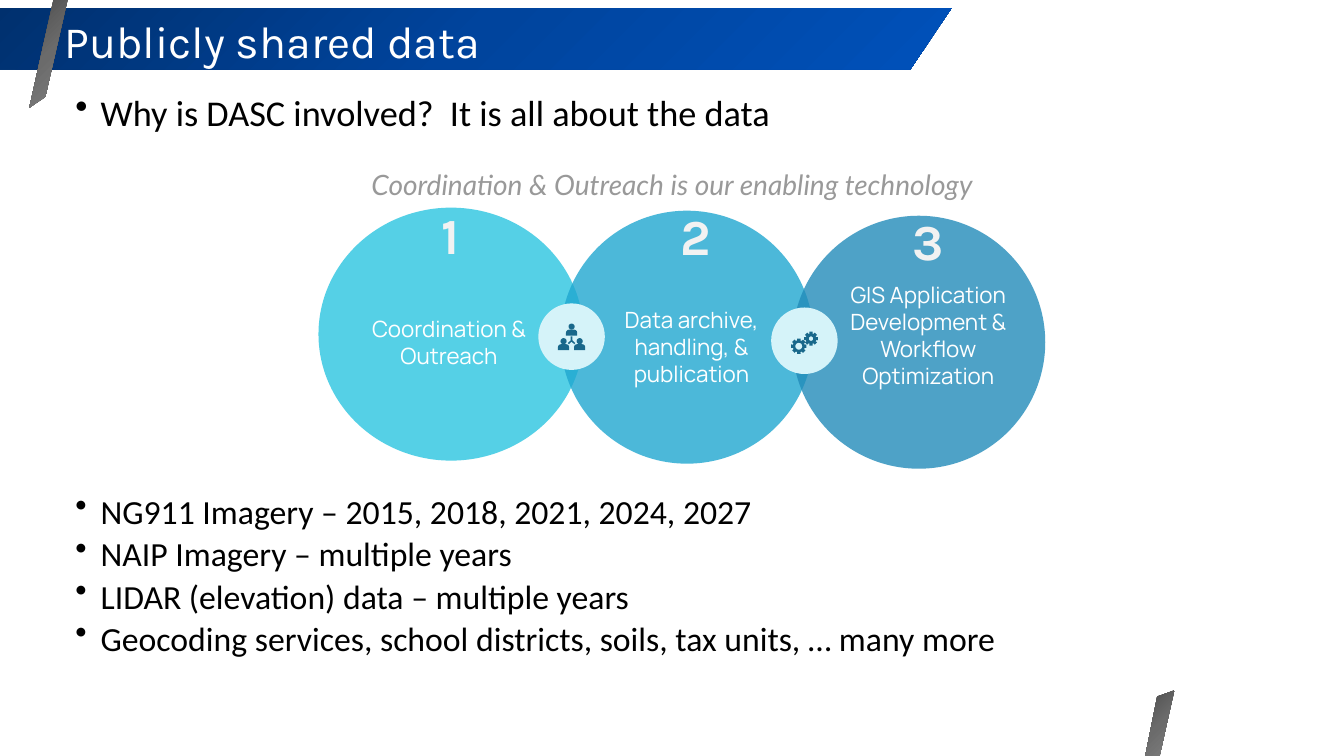
import copy
import math
from dataclasses import dataclass
from typing import Any

import pptx
import pptx.dml.color
import pptx.enum.shapes
import pptx.enum.text
import pptx.oxml
import pptx.oxml.ns
import pptx.util

Pt = pptx.util.Pt
RGB = pptx.dml.color.RGBColor
Kind = pptx.enum.shapes.MSO_SHAPE
Align = pptx.enum.text.PP_ALIGN
Anchor = pptx.enum.text.MSO_ANCHOR
Fit = pptx.enum.text.MSO_AUTO_SIZE
qn = pptx.oxml.ns.qn

WHITE = RGB(0xFF, 0xFF, 0xFF)
BLACK = RGB(0x00, 0x00, 0x00)
GREY = RGB(0x99, 0x99, 0x99)
PALE = RGB(0xF2, 0xF2, 0xF2)
ICE = RGB(0xD5, 0xF3, 0xF9)
TEAL = RGB(0x19, 0x68, 0x8B)
AQUA = RGB(0x2B, 0xC5, 0xE0)
SKY = RGB(0x20, 0xA7, 0xD0)
STEEL = RGB(0x22, 0x8B, 0xB9)
BLUES = (RGB(0x00, 0x30, 0x6E), RGB(0x00, 0x44, 0x9D), RGB(0x00, 0x51, 0xBA))
GREYS = (RGB(0x4C, 0x4C, 0x4C), RGB(0x6B, 0x6B, 0x6B), RGB(0x80, 0x80, 0x80))

Point = tuple[float, float]
Box = tuple[float, float, float, float]


@dataclass(frozen=True)
class Stage:
    oval: Box
    fill: RGB
    digit: str
    digit_box: Box
    label: str
    label_box: Box


@dataclass(frozen=True)
class Band:
    points: list[Point]
    shades: tuple[RGB, RGB, RGB]


@dataclass(frozen=True)
class Gear:
    x: float
    y: float
    tip: float
    root: float
    hole: float


@dataclass(frozen=True)
class Line:
    text: str
    size: float
    before: float


BANDS = [
    Band([(-5.76, 5.76), (679.68, 5.76), (650.16, 49.68), (-5.76, 49.68)], BLUES),
    Band([(38.16, 0), (20.88, 77.04), (32.4, 69.12), (48.24, 0)], GREYS),
    Band([(828, 541.44), (838.8, 493.2), (826.56, 497.52), (817.92, 540.72)], GREYS),
]
STAGES = [
    Stage((227.5, 148.3, 189.4, 180.7), AQUA, "1", (308.2, 142.6, 28.1, 41),
          "Coordination & Outreach", (252.7, 221.8, 136.1, 43.2)),
    Stage((400.3, 150.5, 180.7, 180.7), SKY, "2", (478.8, 143.3, 28.8, 41),
          "Data archive, handling, & publication", (430.6, 215.3, 126.7, 61.9)),
    Stage((565.9, 154.1, 180.7, 180.7), STEEL, "3", (644.4, 146.9, 35.3, 41),
          "GIS Application Development & Workflow Optimization", (599, 197.3, 128.2, 104.4)),
]
LINES = [
    Line("Why is DASC involved?  It is all about the data", 25.9, 0),
    Line("NG911 Imagery – 2015, 2018, 2021, 2024, 2027", 24.1, 264),
    Line("NAIP Imagery – multiple years", 24.1, 10),
    Line("LIDAR (elevation) data – multiple years", 24.1, 10),
    Line("Geocoding services, school districts, soils, tax units, … many more", 24.1, 10),
]
DISC = 47.5
TEAM: Point = (408.3, 240.5)
COGS: Point = (574.6, 243.4)
HEADS: list[Point] = [(0, -7.2), (-5.76, 3.2), (5.76, 3.2)]
LINK: list[Point] = [(0.6, -0.2), (0.6, 2.6), (2.6, 4.5), (2, 5.4), (0, 3.6)]
GEARS = [Gear(570.6, 247.3, 5.6, 4.3, 2.5), Gear(579.3, 241.9, 5.1, 3.8, 1.6)]


def paint(shape: Any, fill: RGB, alpha: int = 100) -> None:
    shape.shadow.inherit = False
    shape.line.fill.background()
    shape.fill.solid()
    shape.fill.fore_color.rgb = fill
    if alpha < 100:
        tint = shape.fill._xPr.find(".//" + qn("a:srgbClr"))
        tint.append(pptx.oxml.parse_xml(
            '<a:alpha xmlns:a="http://schemas.openxmlformats.org/drawingml/2006/main" '
            f'val="{alpha * 1000}"/>'))


def blend(shape: Any, shades: tuple[RGB, RGB, RGB]) -> None:
    """Fill with three evenly spaced colours running down to the right."""
    shape.fill.gradient()
    shape.fill.gradient_angle = 315
    first = shape.fill._xPr.find(".//" + qn("a:gs"))
    first.addnext(copy.deepcopy(first))
    for rank, (stop, shade) in enumerate(zip(shape.fill.gradient_stops, shades)):
        stop.position = rank / 2
        stop.color.rgb = shade


def preset(slide: Any, kind: Any, box: Box, fill: RGB, alpha: int = 100) -> Any:
    shape = slide.shapes.add_shape(kind, *map(Pt, box))
    paint(shape, fill, alpha)
    return shape


def outline(slide: Any, rings: list[list[Point]], fill: RGB) -> Any:
    """Draw closed rings as one shape; an inner ring cuts a hole."""
    rings = [[(Pt(x), Pt(y)) for x, y in ring] for ring in rings]
    pen = slide.shapes.build_freeform(*rings[0][0], scale=1.0)
    pen.add_line_segments(rings[0][1:], close=True)
    for ring in rings[1:]:
        pen.move_to(*ring[0])
        pen.add_line_segments(ring[1:], close=True)
    shape = pen.convert_to_shape()
    paint(shape, fill)
    return shape


def style(para: Any, text: str, *, size: float, face: str, fill: RGB, bold: bool = False,
          slant: bool = False, align: Any = Align.LEFT) -> None:
    para.text = text
    para.alignment = align
    font = para.font
    font.size, font.name, font.bold, font.italic = Pt(size), face, bold, slant
    font.color.rgb = fill


def frame(slide: Any, box: Box, grow: bool = True) -> Any:
    body = slide.shapes.add_textbox(*map(Pt, box)).text_frame
    body.word_wrap = True
    body.auto_size = Fit.SHAPE_TO_FIT_TEXT if grow else Fit.NONE
    return body


def write(slide: Any, box: Box, text: str, **look: Any) -> None:
    style(frame(slide, box).paragraphs[0], text, **look)


def polar(gear: Gear, size: float, turn: float) -> Point:
    angle = math.radians(turn)
    return gear.x + size * math.cos(angle), gear.y + size * math.sin(angle)


def cog(slide: Any, gear: Gear) -> None:
    edge = [polar(gear, size, turn + shift) for turn in range(0, 360, 45)
            for size, shift in ((gear.root, -16), (gear.tip, -13), (gear.tip, 13), (gear.root, 16))]
    hole = [polar(gear, gear.hole, turn) for turn in range(0, 360, 15)]
    outline(slide, [edge, hole], TEAL)


def person(slide: Any, x: float, y: float) -> None:
    preset(slide, Kind.OVAL, (x - 2.2, y - 2.2, 4.4, 4.4), TEAL)
    torso = preset(slide, Kind.ROUND_2_SAME_RECTANGLE, (x - 4, y + 2.2, 8, 4.2), TEAL)
    torso.adjustments[0] = 0.5


def disc(slide: Any, hub: Point) -> None:
    x, y = hub
    preset(slide, Kind.OVAL, (x - DISC / 2, y - DISC / 2, DISC, DISC), ICE)


def bullets(slide: Any, box: Box) -> None:
    body = frame(slide, box, grow=False)
    for rank, line in enumerate(LINES):
        para = body.add_paragraph() if rank else body.paragraphs[0]
        para.line_spacing = 0.7
        para.space_before = Pt(line.before)
        props = para._p.get_or_add_pPr()
        props.set("marL", str(Pt(18)))
        props.set("indent", str(Pt(-18)))
        props.append(pptx.oxml.parse_xml(
            '<a:buChar xmlns:a="http://schemas.openxmlformats.org/drawingml/2006/main" char="•"/>'))
        style(para, line.text, size=line.size, face="Calibri", fill=BLACK)


def main() -> None:
    deck = pptx.Presentation()
    deck.slide_width, deck.slide_height = Pt(960), Pt(540)
    slide = deck.slides.add_slide(deck.slide_layouts[6])
    for band in BANDS:
        blend(outline(slide, [band.points], band.shades[0]), band.shades)
    title = frame(slide, (38.9, 10.1, 611.3, 43.2), grow=False)
    title.vertical_anchor = Anchor.MIDDLE
    style(title.paragraphs[0], "Publicly shared data", size=32, face="Karla", fill=WHITE)
    title.paragraphs[0].line_spacing = 0.9
    bullets(slide, (46.8, 69.1, 802.1, 443.5))
    write(slide, (211.7, 115.9, 537.1, 22.3), "Coordination & Outreach is our enabling technology",
          size=20, face="Lato", fill=GREY, slant=True, align=Align.CENTER)
    for stage in STAGES:
        preset(slide, Kind.OVAL, stage.oval, stage.fill, alpha=80)
    for stage in STAGES:
        write(slide, stage.label_box, stage.label, size=16, face="Manrope", fill=WHITE,
              align=Align.CENTER)
        write(slide, stage.digit_box, stage.digit, size=36, face="Karla", fill=PALE, bold=True)
    disc(slide, TEAM)
    for x, y in HEADS:
        person(slide, TEAM[0] + x, TEAM[1] + y)
    ring = LINK + [(-x, y) for x, y in reversed(LINK[:-1])]
    outline(slide, [[(TEAM[0] + x, TEAM[1] + y) for x, y in ring]], TEAL)
    disc(slide, COGS)
    for gear in GEARS:
        cog(slide, gear)
    deck.save("out.pptx")


if __name__ == "__main__":
    main()
